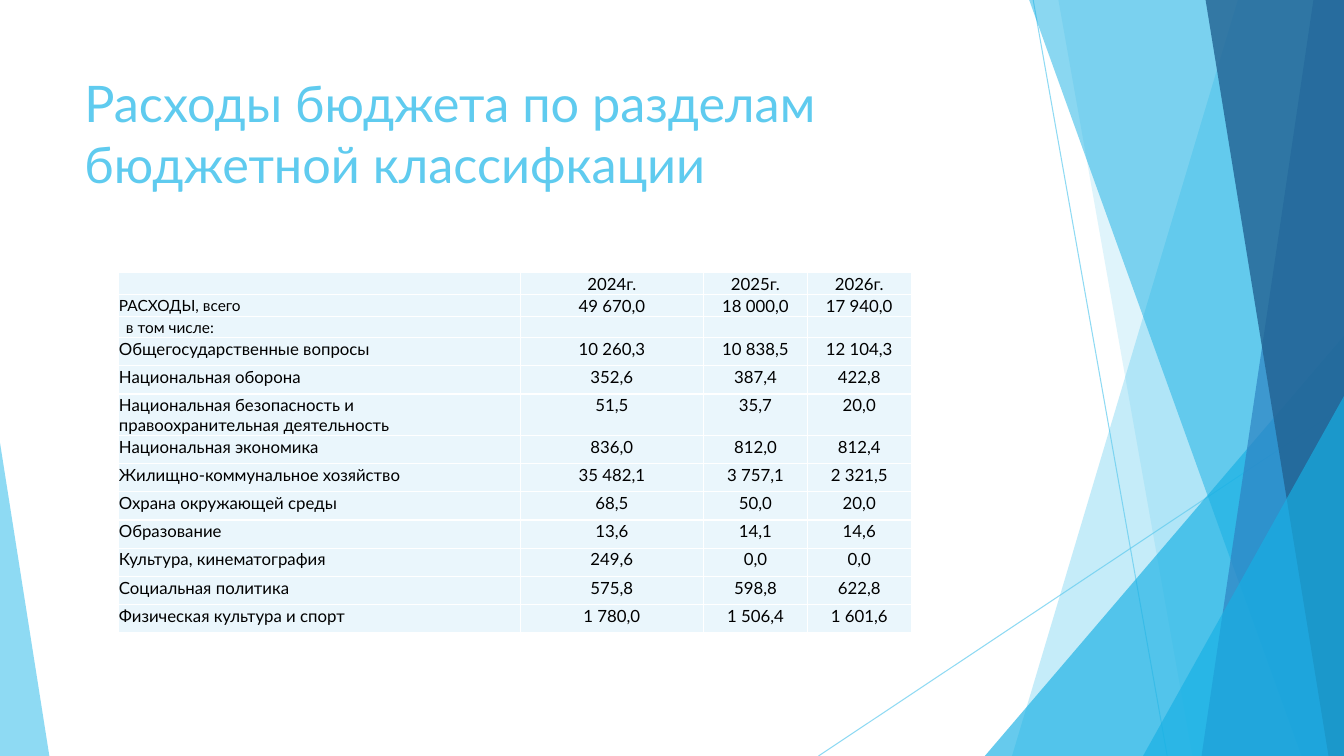
from lxml.etree import SubElement
from pptx import Presentation
from pptx.dml.color import RGBColor
from pptx.enum.shapes import MSO_CONNECTOR as Connector, MSO_SHAPE as Shape
from pptx.enum.text import MSO_ANCHOR as Anchor, PP_ALIGN as Align
from pptx.oxml.ns import qn
from pptx.util import Inches, Pt

WIDTH, HEIGHT = 13.33, 7.5
COLUMNS, ROWS = 40, 22.5

SKY, CYAN, BLUE, NAVY = "5FCBEF", "17B0E4", "2E83C3", "226292"
PALE, WHITE, BLACK = "EAF6FC", "FFFFFF", "000000"

HEADER = ["", "2024г.", "2025г.", "2026г."]
EXPENSES = [
    ["РАСХОДЫ, всего", "49 670,0", "18 000,0", "17 940,0"],
    ["в том числе:", "", "", ""],
    ["Общегосударственные вопросы", "10 260,3", "10 838,5", "12 104,3"],
    ["Национальная оборона", "352,6", "387,4", "422,8"],
    ["Национальная безопасность и правоохранительная деятельность", "51,5", "35,7", "20,0"],
    ["Национальная экономика", "836,0", "812,0", "812,4"],
    ["Жилищно-коммунальное хозяйство", "35 482,1", "3 757,1", "2 321,5"],
    ["Охрана окружающей среды", "68,5", "50,0", "20,0"],
    ["Образование", "13,6", "14,1", "14,6"],
    ["Культура, кинематография", "249,6", "0,0", "0,0"],
    ["Социальная политика", "575,8", "598,8", "622,8"],
    ["Физическая культура и спорт", "1 780,0", "1 506,4", "1 601,6"],
]


def color(value):
    return RGBColor.from_string(value)


def x(columns):
    return Inches(columns * WIDTH / COLUMNS)


def y(rows):
    return Inches(rows * HEIGHT / ROWS)


def set_alpha(fill_xml, percent):
    SubElement(fill_xml.find(qn("a:srgbClr")), qn("a:alpha"), val=str(percent * 1000))


class SlideBuilder:
    font = "Lato"

    def __init__(self, slide):
        self.slide = slide
        self.shapes = slide.shapes

    def paint(self, shape, fill, alpha):
        shape.shadow.inherit = False
        shape.fill.solid()
        shape.fill.fore_color.rgb = color(fill)
        set_alpha(shape._element.spPr.find(qn("a:solidFill")), alpha)
        shape.line.fill.background()

    def line(self, start, end, stroke, alpha):
        connector = self.shapes.add_connector(
            Connector.STRAIGHT, x(start[0]), y(start[1]), x(end[0]), y(end[1]))
        connector.line.color.rgb = color(stroke)
        connector.line.width = Pt(0.75)
        properties = connector._element.spPr
        set_alpha(properties.find(qn("a:ln")).find(qn("a:solidFill")), alpha)
        SubElement(properties, qn("a:effectLst"))

    def band(self, top, bottom, fill, alpha):
        """Fill from a slanted left edge to the right side of the slide."""
        outline = self.shapes.build_freeform(x(top), 0)
        outline.add_line_segments(
            [(x(COLUMNS), 0), (x(COLUMNS), y(ROWS)), (x(bottom), y(ROWS))], close=True)
        self.paint(outline.convert_to_shape(), fill, alpha)

    def corner(self, left, top, right, apex, fill, alpha):
        """Triangle standing on the bottom of the slide."""
        shape = self.shapes.add_shape(
            Shape.ISOSCELES_TRIANGLE, x(left), y(top), x(right - left), y(ROWS - top))
        shape.adjustments[0] = apex
        self.paint(shape, fill, alpha)

    def run(self, paragraph, text, size, ink):
        run = paragraph.add_run()
        run.text = text
        run.font.name = self.font
        run.font.size = Pt(size)
        run.font.color.rgb = color(ink)

    def title(self, left, top, width, height, text):
        box = self.shapes.add_textbox(x(left), y(top), x(width), y(height))
        box.text_frame.word_wrap = True
        self.run(box.text_frame.paragraphs[0], text, 36, SKY)

    def cell(self, cell, text, size, align, anchor, indent=0):
        cell.fill.solid()
        cell.fill.fore_color.rgb = color(PALE)
        cell.margin_left = Inches(0.01 + indent)
        cell.margin_right = cell.margin_top = Inches(0.01)
        cell.margin_bottom = 0
        cell.vertical_anchor = anchor
        paragraph = cell.text_frame.paragraphs[0]
        paragraph.alignment = align
        if text:
            self.run(paragraph, text, size, BLACK)
        else:
            SubElement(paragraph._p, qn("a:endParaRPr"), sz=str(size * 100))
        # Borders come before the fill in the cell properties
        properties = cell._tc.get_or_add_tcPr()
        for index, side in enumerate(("lnL", "lnR", "lnT", "lnB")):
            border = SubElement(properties, qn(f"a:{side}"), w=str(Pt(1)))
            SubElement(SubElement(border, qn("a:solidFill")), qn("a:srgbClr"), val=WHITE)
            properties.insert(index, border)

    def table(self, left, top, widths, heights, records):
        frame = self.shapes.add_table(
            len(records), len(widths), x(left), y(top), x(sum(widths)), y(sum(heights)))
        table = frame.table
        table.first_row = table.horz_banding = False
        for column, width in zip(table.columns, widths):
            column.width = x(width)
        for row, height in zip(table.rows, heights):
            row.height = y(height)
        anchors = [Anchor.BOTTOM, Anchor.MIDDLE, Anchor.MIDDLE]
        for r, record in enumerate(records):
            anchor = anchors[r] if r < len(anchors) else Anchor.TOP
            for c, text in enumerate(record):
                size = 11 if r == 2 or (r == 1 and c == 0) else 12
                align = Align.CENTER if c else Align.LEFT
                indent = 0.07 if (r, c) == (2, 0) else 0
                self.cell(table.cell(r, c), text, size, align, anchor, indent)


def main():
    presentation = Presentation()
    presentation.slide_width = Inches(WIDTH)
    presentation.slide_height = Inches(HEIGHT)
    builder = SlideBuilder(presentation.slides.add_slide(presentation.slide_layouts[6]))

    # Thin crossing lines
    builder.line((30.75, 0), (34.74, ROWS), SKY, 70)
    builder.line((COLUMNS, 12.09), (24.36, ROWS), SKY, 70)

    # Translucent facets on the right and in the left corner
    builder.band(36.84, 30.12, SKY, 36)
    builder.band(31.5, 35.49, SKY, 20)
    builder.corner(29.31, 9.99, COLUMNS, 1, CYAN, 66)
    builder.band(30.63, 38.73, CYAN, 50)
    builder.band(39.09, 35.76, BLUE, 70)
    builder.band(35.88, 39.54, NAVY, 80)
    builder.corner(34.02, 11.79, COLUMNS, 1, CYAN, 66)
    builder.corner(0, 13.17, 1.47, 0, SKY, 70)

    # Title and budget table
    builder.title(2.22, 2.01, 28.2, 4.32,
                  "Расходы бюджета по разделам бюджетной классифкации")
    records = [HEADER] + EXPENSES
    heights = [0.66, 0.66, 0.63] + [0.84] * (len(records) - 3)
    builder.table(3.51, 8.1, [11.97, 5.46, 3.09, 3.09], heights, records)

    presentation.save("out.pptx")


if __name__ == "__main__":
    main()
